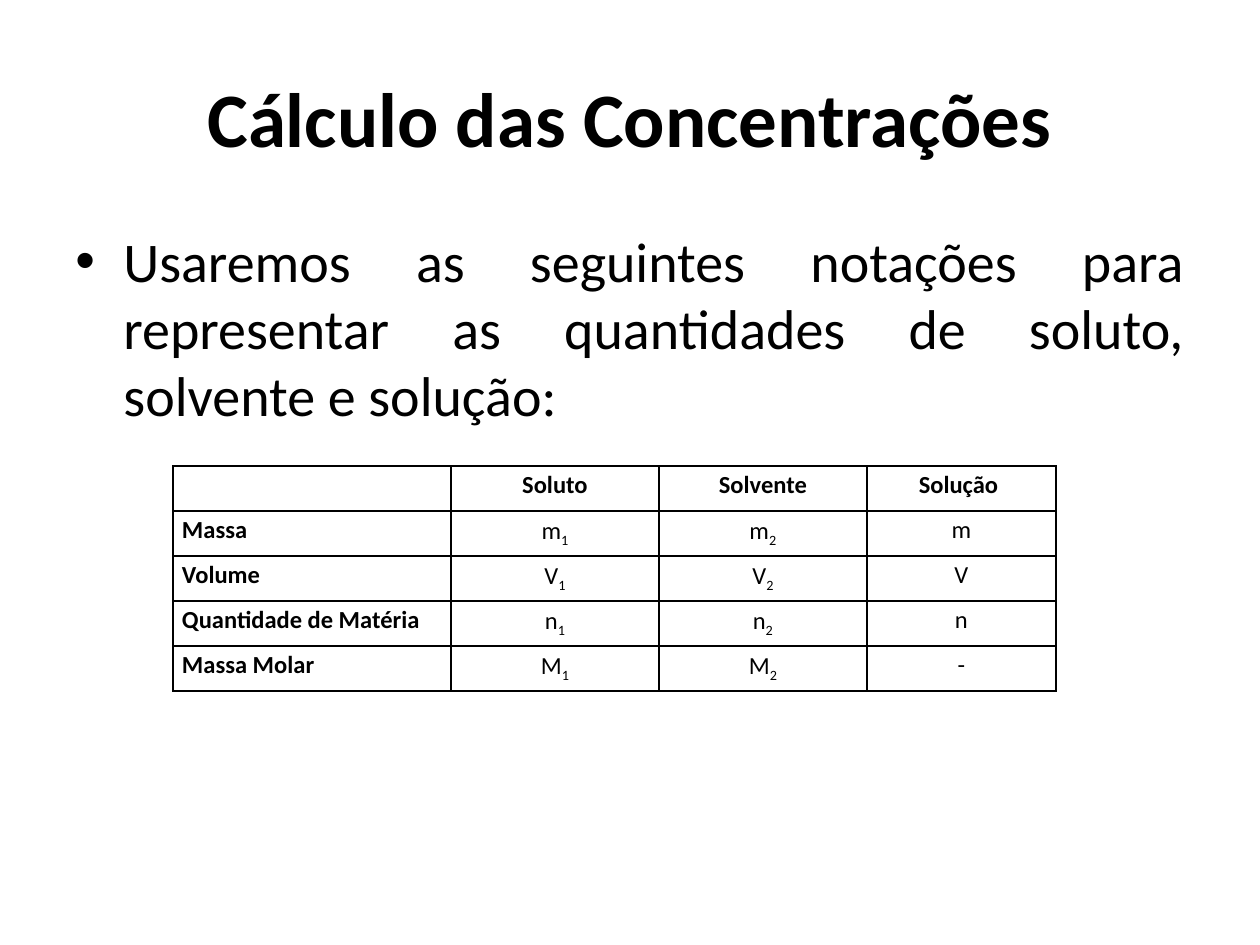
from dataclasses import dataclass

from lxml.etree import SubElement
from pptx import Presentation
from pptx.dml.color import RGBColor
from pptx.enum.text import MSO_ANCHOR as Anchor, PP_ALIGN as Align
from pptx.oxml import parse_xml
from pptx.oxml.ns import nsdecls, qn
from pptx.util import Pt

PX = 914400 // 126


@dataclass(frozen=True)
class Theme:
    font: str = "Calibri"
    ink: str = "000000"
    title: int = 44
    body: int = 32
    cell: int = 14


THEME = Theme()

TITLE = "Cálculo das Concentrações"
INTRO = ("Usaremos as seguintes notações para representar as quantidades "
         "de soluto, solvente e solução:")
HEADINGS = ["", "Soluto", "Solvente", "Solução "]
# Each quantity has a symbol, indexed by component, and one for the solution
QUANTITIES = [
    ("Massa", "m", "m"),
    ("Volume", "V", "V"),
    ("Quantidade de Matéria", "n", "n"),
    ("Massa Molar", "M", "-"),
]

TITLE_BOX = (63, 38, 1134, 157)
INTRO_BOX = (63, 220, 1134, 624)
BULLET_INDENT = 48
TABLE_LEFT, TABLE_TOP = 173, 466
COLUMN_WIDTHS = [278, 208, 208, 189]
ROW_HEIGHT = 45
CELL_INSET = 9


def px(*lengths):
    return [length * PX for length in lengths]


def style(paragraph, size, align, bold=False):
    paragraph.alignment = align
    font = paragraph.font
    font.name, font.size, font.bold = THEME.font, Pt(size), bold
    font.color.rgb = RGBColor.from_string(THEME.ink)


def add_text(slide, box, text, size, align, anchor, bold=False):
    frame = slide.shapes.add_textbox(*px(*box)).text_frame
    frame.word_wrap = True
    frame.vertical_anchor = anchor
    paragraph = frame.paragraphs[0]
    paragraph.text = text
    style(paragraph, size, align, bold)
    return paragraph


def add_bullet(paragraph):
    paragraph.space_before = Pt(THEME.body * 0.2)
    properties = paragraph._p.get_or_add_pPr()
    properties.set("marL", str(BULLET_INDENT * PX))
    properties.set("indent", str(-BULLET_INDENT * PX))
    default_font = properties.find(qn("a:defRPr"))
    for tag, key, value in [("a:buFont", "typeface", "Arial"),
                            ("a:buChar", "char", "•")]:
        bullet = SubElement(properties, qn(tag))
        bullet.set(key, value)
        default_font.addprevious(bullet)


def add_borders(cell):
    properties = cell._tc.get_or_add_tcPr()
    for position, side in enumerate("LRTB"):
        properties.insert(position, parse_xml(
            f'<a:ln{side} {nsdecls("a")} w="12700"><a:solidFill>'
            f'<a:srgbClr val="{THEME.ink}"/></a:solidFill></a:ln{side}>'))


def fill_cell(cell, text, subscript, align, bold):
    cell.fill.background()
    add_borders(cell)
    cell.margin_left = cell.margin_right = CELL_INSET * PX
    cell.margin_top = cell.margin_bottom = 0
    paragraph = cell.text_frame.paragraphs[0]
    paragraph.line_spacing = 1.15
    style(paragraph, THEME.cell, align, bold)
    if text:
        paragraph.add_run().text = text
    if subscript:
        run = paragraph.add_run()
        run.text = subscript
        run.font._element.set("baseline", "-25000")


def add_notation_table(slide):
    rows = [[(heading, "") for heading in HEADINGS]]
    rows += [[(name, ""), (symbol, "1"), (symbol, "2"), (solution, "")]
             for name, symbol, solution in QUANTITIES]
    table = slide.shapes.add_table(
        len(rows), len(HEADINGS),
        *px(TABLE_LEFT, TABLE_TOP, sum(COLUMN_WIDTHS), ROW_HEIGHT * len(rows))).table
    table.first_row = table.horz_banding = False
    for column, width in zip(table.columns, COLUMN_WIDTHS):
        column.width = width * PX
    for r, row in enumerate(rows):
        table.rows[r].height = ROW_HEIGHT * PX
        for c, (text, subscript) in enumerate(row):
            align = Align.CENTER if c else Align.LEFT
            fill_cell(table.cell(r, c), text, subscript, align, bold=r == 0 or c == 0)


def main():
    deck = Presentation()
    deck.slide_width, deck.slide_height = px(1260, 945)
    slide = deck.slides.add_slide(deck.slide_layouts[6])
    add_text(slide, TITLE_BOX, TITLE, THEME.title, Align.CENTER, Anchor.MIDDLE, bold=True)
    add_bullet(add_text(slide, INTRO_BOX, INTRO, THEME.body, Align.JUSTIFY, Anchor.TOP))
    add_notation_table(slide)
    deck.save("out.pptx")


if __name__ == "__main__":
    main()
